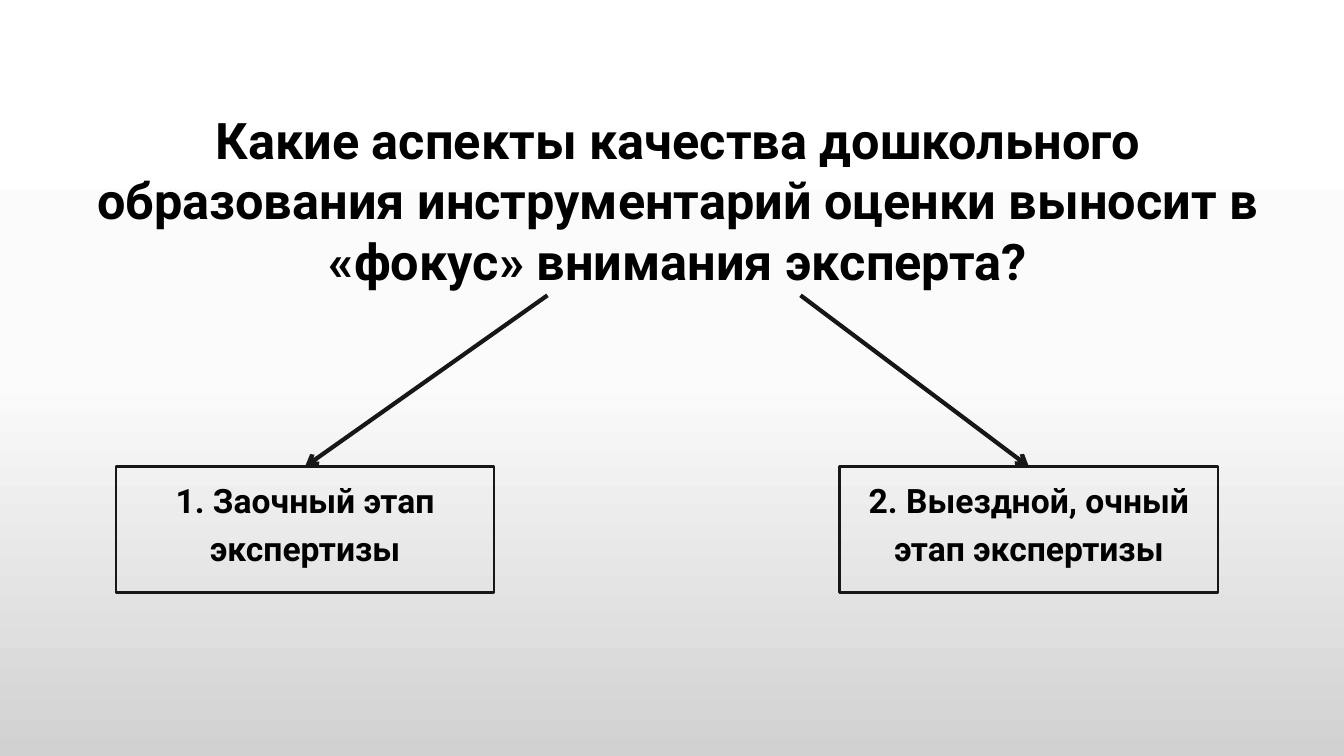
from copy import deepcopy
from dataclasses import dataclass

from lxml.etree import SubElement
from pptx import Presentation
from pptx.dml.color import RGBColor
from pptx.enum.shapes import MSO_CONNECTOR, MSO_SHAPE
from pptx.enum.text import MSO_ANCHOR, MSO_AUTO_SIZE, PP_ALIGN
from pptx.oxml.ns import qn
from pptx.util import Inches, Pt


@dataclass(frozen=True)
class Theme:
    font: str = "Roboto"
    text: str = "000000"
    outline: str = "181717"
    backdrop: tuple = ((0, "FFFFFF"), (0.5, "FBFBFB"), (1, "D1D1D1"))
    title_size: int = 36
    stage_size: int = 24
    box_line: float = 2
    arrow_line: float = 3


def write_text(shape, text, *, theme, size, anchor, **spacing):
    """Fill a shape with one centred bold paragraph; spacing sets paragraph properties."""
    frame = shape.text_frame
    frame.word_wrap = True
    frame.auto_size = MSO_AUTO_SIZE.NONE
    frame.vertical_anchor = anchor
    paragraph = frame.paragraphs[0]
    paragraph.alignment = PP_ALIGN.CENTER
    for name, value in spacing.items():
        setattr(paragraph, name, value)
    run = paragraph.add_run()
    run.text = text
    run.font.name = theme.font
    run.font.size = Pt(size)
    run.font.bold = True
    run.font.color.rgb = RGBColor.from_string(theme.text)


class SlideBuilder:
    def __init__(self, slide, theme):
        self.slide = slide
        self.theme = theme

    def background(self):
        fill = self.slide.background.fill
        fill.gradient()
        fill.gradient_angle = 270
        stops = self.slide.element.xpath(".//p:bg//a:gsLst")[0]
        stops.insert(1, deepcopy(stops[0]))
        for stop, (position, color) in zip(fill.gradient_stops, self.theme.backdrop):
            stop.position = position
            stop.color.rgb = RGBColor.from_string(color)

    def title(self, text, left, top, width, height):
        heading = self.slide.shapes.title
        heading.left, heading.top = Inches(left), Inches(top)
        heading.width, heading.height = Inches(width), Inches(height)
        write_text(heading, text, theme=self.theme, size=self.theme.title_size,
                   anchor=MSO_ANCHOR.BOTTOM, space_before=Pt(3))

    def stage_box(self, text, left, top, width, height):
        box = self.slide.shapes.add_shape(
            MSO_SHAPE.RECTANGLE, Inches(left), Inches(top), Inches(width), Inches(height))
        box.shadow.inherit = False
        box.fill.background()
        self.outline(box.line, self.theme.box_line)
        write_text(box, text, theme=self.theme, size=self.theme.stage_size,
                   anchor=MSO_ANCHOR.TOP, line_spacing=1.2)

    def arrow(self, start, end):
        arrow = self.slide.shapes.add_connector(
            MSO_CONNECTOR.STRAIGHT, *map(Inches, (*start, *end)))
        self.outline(arrow.line, self.theme.arrow_line)
        properties = arrow._element.spPr
        SubElement(properties.find(qn("a:ln")), qn("a:tailEnd"), type="arrow")
        SubElement(properties, qn("a:effectLst"))

    def outline(self, line, width):
        line.color.rgb = RGBColor.from_string(self.theme.outline)
        line.width = Pt(width)


def main():
    presentation = Presentation()
    presentation.slide_width = Inches(13.33)
    presentation.slide_height = Inches(7.5)
    title_only = presentation.slide_layouts[5]
    builder = SlideBuilder(presentation.slides.add_slide(title_only), Theme())

    builder.background()
    builder.title(
        "Какие аспекты качества дошкольного образования инструментарий оценки "
        "выносит в «фокус» внимания эксперта?", 0.7, 0.87, 12.05, 2.06)

    title_bottom, stage_top = 2.93, 4.63
    stage_width, stage_height = 3.75, 1.25
    stages = (
        ("1. Заочный этап экспертизы", 1.15, 5.43),
        ("2. Выездной, очный этап экспертизы", 8.33, 7.94),
    )
    for text, left, arrow_start in stages:
        builder.stage_box(text, left, stage_top, stage_width, stage_height)
        builder.arrow((arrow_start, title_bottom), (left + stage_width / 2, stage_top))

    presentation.save("out.pptx")


if __name__ == "__main__":
    main()
